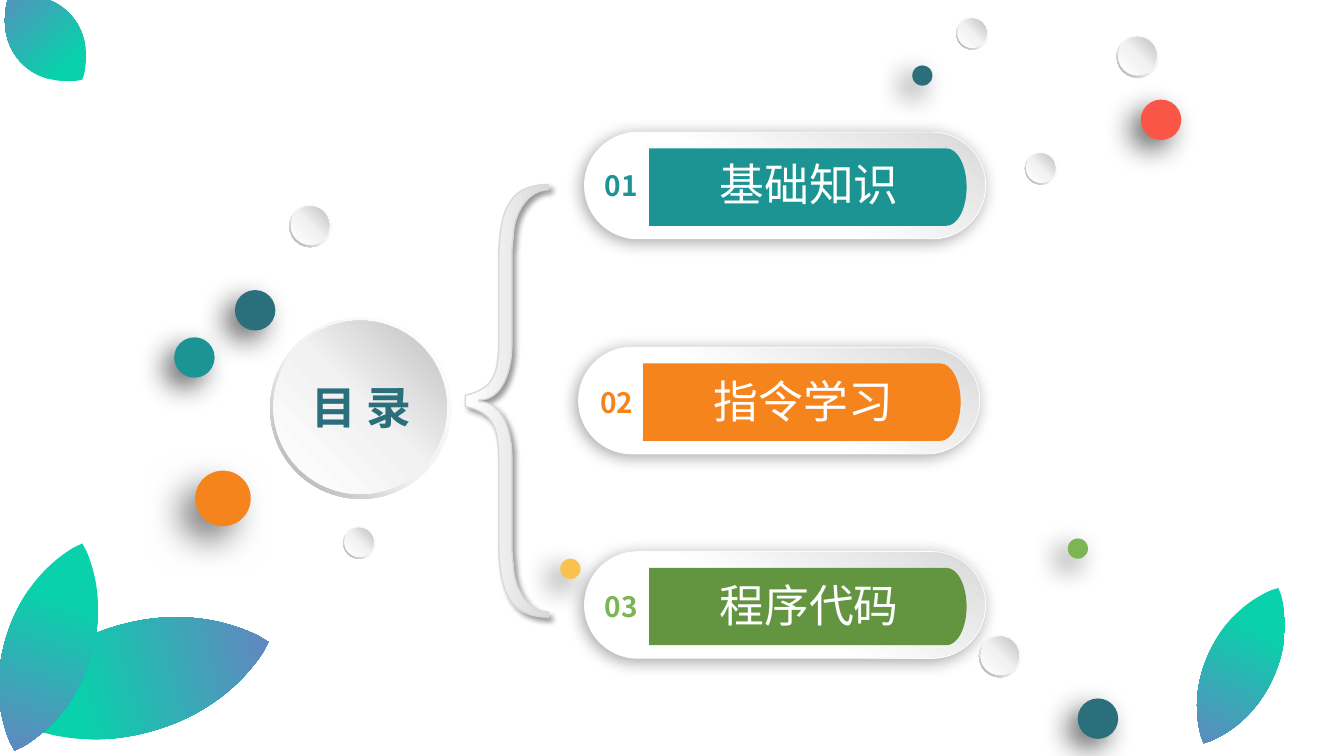
from lxml import etree
from pptx import Presentation
from pptx import util as u
from pptx.dml.color import RGBColor
from pptx.enum import shapes, text
from pptx.oxml.ns import qn

# All lengths are centimetres
FONT = "Noto Sans CJK SC"
TITLE = "目 录"
TITLE_BOX = (7.11, 9.55, 3.99, 1.37)
DARK_TEAL, TEAL, ORANGE, GREEN, WHITE = "2B6F7D", "1C9494", "F5841C", "7CB554", "FFFFFF"

# number, its left and top, heading, pill left and top, number colour, panel colour
CHAPTERS = [
    ("01", 14.97, 4.1, "基础知识", 14.73, 3.33, TEAL, TEAL),
    ("02", 14.86, 9.58, "指令学习", 14.58, 8.75, ORANGE, ORANGE),
    ("03", 14.97, 14.73, "程序代码", 14.73, 13.9, GREEN, "639541"),
]
PILL = (10.11, 2.69)
PANEL = (8, 1.95)

# left, top, width, height, rotation
LEAF_PAIR = [(2.01, 13.61, 2.79, 6.96, 254.8), (0.13, 13.56, 2.18, 5.49, 18.1)]
SINGLE_LEAVES = [(30.41, 14.6, 1.73, 4.34, 25.7), (0.28, -0.43, 1.73, 2.79, 138.3)]

# left, top, diameter
HUB = (6.81, 8, 4.57)
BEADS = [
    (24.1, 0.44, 0.81), (28.14, 0.89, 1.07), (8.65, 13.27, 0.81),
    (25.83, 3.84, 0.81), (24.67, 16, 1.07), (7.29, 5.16, 1.07),
]
# left, top, diameter, colour
DOTS = [
    (28.75, 2.51, 1.02, "F95647"), (22.99, 1.65, 0.51, DARK_TEAL),
    (5.92, 7.31, 1.02, DARK_TEAL), (14.12, 14.08, 0.51, "FAC14D"),
    (4.92, 11.86, 1.4, ORANGE), (27.16, 17.6, 1.02, DARK_TEAL),
    (4.39, 8.5, 1.02, TEAL), (26.91, 13.57, 0.51, GREEN),
]

# Gradients: (stops, clockwise angle)
PILL_FILL = ([(45, WHITE), (100, "D9D9D9")], 300)
RING_FILL = ([(0, WHITE), (55, "F2F2F2"), (100, "A6A6A6")], 135)
BEAD_FILL = ([(0, WHITE), (51, "F2F2F2"), (100, "BFBFBF")], 315)
BRACE_FILL = ([(0, WHITE), (100, "D9D9D9")], 0)
LEAF_FILL = ([(0, "09D1AB"), (31, "09D1AB"), (100, "6E7DC3")], 90)

# Shadows: opacity %, blur pt, distance pt, angle
PILL_SHADOW = (34, 12, 3, 135)
BRACE_SHADOW = (40, 4, 3, 45)
DOT_SHADOW = (60, 20, 10, 135)
BIG_DOT_SHADOW = (50, 25, 15, 135)

# Outlines: a step of one point is a line, a step of three is a curve
BRACE_MIDDLE = 10.1
BRACE_HALF = [
    [(11.73, 9.96)],
    [(12.07, 9.88), (12.29, 9.75), (12.4, 9.55)],
    [(12.52, 9.37), (12.57, 9.04), (12.57, 8.59)],
    [(12.57, 6.53)],
    [(12.57, 5.82), (12.67, 5.33), (12.88, 5.05)],
    [(13.06, 4.78), (13.39, 4.65), (13.82, 4.65)],
    [(13.82, 4.78)],
    [(13.34, 4.78), (12.95, 5.31), (12.93, 5.99)],
    [(12.9, 6.32)],
    [(12.9, 8.69)],
    [(12.9, 9.32), (12.67, 10.08), (12.07, 10.08)],
]
# Upper left quarter, as shares of width and height from the centre
LEAF_QUARTER = [
    [(0, -0.5)],
    [(-0.08, -0.47)],
    [(-0.34, -0.35), (-0.5, -0.19), (-0.5, 0)],
]

deck = Presentation()
deck.slide_width, deck.slide_height = u.Cm(33.87), u.Cm(19.05)
page = deck.slides.add_slide(deck.slide_layouts[6])


def color(code):
    return RGBColor.from_string(code)


def mirror(steps, flip):
    """Give the flipped steps in the opposite drawing order."""
    points = [flip(*point) for step in steps for point in step][::-1]
    turned, start = [points[:1]], 1
    for step in steps[:0:-1]:
        turned.append(points[start:start + len(step)])
        start += len(step)
    return turned


def style(shape, fill, line=None, shadow=None):
    """Apply a plain colour or gradient, an outline (colour, points) and a shadow."""
    if isinstance(fill, str):
        shape.fill.solid()
        shape.fill.fore_color.rgb = color(fill)
    else:
        stops, angle = fill
        shape.fill.gradient()
        shape.fill.gradient_angle = (360 - angle) % 360
        stop_list = next(shape._element.iter(qn("a:gsLst")))
        for old in list(stop_list):
            stop_list.remove(old)
        for position, code in stops:
            stop = etree.SubElement(stop_list, qn("a:gs"), pos=str(position * 1000))
            etree.SubElement(stop, qn("a:srgbClr"), val=code)
    if line:
        shape.line.color.rgb = color(line[0])
        shape.line.width = u.Pt(line[1])
    else:
        shape.line.fill.background()
    shape.shadow.inherit = False
    if shadow:
        opacity, blur, distance, angle = shadow
        outer = etree.SubElement(
            next(shape._element.iter(qn("a:effectLst"))), qn("a:outerShdw"),
            blurRad=str(u.Pt(blur)), dist=str(u.Pt(distance)), dir=str(angle * 60000),
            algn="ctr", rotWithShape="0")
        tint = etree.SubElement(outer, qn("a:srgbClr"), val="000000")
        etree.SubElement(tint, qn("a:alpha"), val=str(opacity * 1000))
    return shape


def add_preset(home, kind, left, top, width, height, *look):
    shape = home.shapes.add_shape(kind, *map(u.Cm, (left, top, width, height)))
    return style(shape, *look)


def add_outline(home, steps, *look):
    """Draw a closed outline, joining each step of three points into a curve."""
    first, *rest = [(u.Cm(x), u.Cm(y)) for step in steps for x, y in step]
    builder = home.shapes.build_freeform(*first)
    builder.add_line_segments(rest, close=True)
    shape = builder.convert_to_shape()
    segments = iter(list(shape._element.iter(qn("a:lnTo"))))
    for step in steps[1:]:
        parts = [next(segments) for point in step]
        if len(parts) == 3:
            curve = etree.Element(qn("a:cubicBezTo"))
            parts[0].addprevious(curve)
            for part in parts:
                curve.append(part[0])
                part.getparent().remove(part)
    return style(shape, *look)


def add_label(home, words, area, size, code, bold=False, wrap=True):
    box = home.shapes.add_textbox(*map(u.Cm, area))
    frame = box.text_frame
    layout = dict(word_wrap=wrap, vertical_anchor=text.MSO_ANCHOR.MIDDLE,
                  auto_size=text.MSO_AUTO_SIZE.SHAPE_TO_FIT_TEXT)
    for name, value in layout.items():
        setattr(frame, name, value)
    para = frame.paragraphs[0]
    para.alignment = text.PP_ALIGN.CENTER
    span = para.add_run()
    span.text = words
    for name, value in dict(name=FONT, size=u.Pt(size), bold=bold).items():
        setattr(span.font, name, value)
    span.font.color.rgb = color(code)
    etree.SubElement(span._r.get_or_add_rPr(), qn("a:ea"), typeface=FONT)
    return frame


def add_bead(left, top, size, share=0.905):
    """Draw a ring with a disc over it; share is disc size to ring size."""
    group = page.shapes.add_group_shape()
    ring = add_preset(group, shapes.MSO_SHAPE.DONUT, left, top, size, size, RING_FILL)
    ring.adjustments[0] = 0.049
    inset = size * (1 - share) * 0.4
    add_preset(group, shapes.MSO_SHAPE.OVAL, left + inset, top + inset,
               size * share, size * share, BEAD_FILL)
    return group


def add_chapter(number, number_left, number_top, heading, left, top, number_color, panel_color):
    group = page.shapes.add_group_shape()
    pill = add_preset(group, shapes.MSO_SHAPE.ROUNDED_RECTANGLE, left, top, *PILL,
                      PILL_FILL, (WHITE, 0.5), PILL_SHADOW)
    pill.adjustments[0] = 0.5
    x, y = left + 1.63, top + 0.41
    right, bottom, middle = x + PANEL[0], y + PANEL[1], y + PANEL[1] / 2
    bend, pull = right - 0.51, PANEL[1] * 0.28
    add_outline(group, [
        [(x, y)], [(bend, y)],
        [(bend + 0.28, y), (right, middle - pull), (right, middle)],
        [(right, middle + pull), (bend + 0.28, bottom), (bend, bottom)],
        [(x, bottom)],
    ], panel_color)
    add_label(group, number, (number_left, number_top, 1.37, 1.12), 20, number_color, True, False)
    add_label(group, heading, (left + 2.86, number_top - 0.3, 5.61, 1.63), 32, WHITE)


def add_leaf(home, left, top, width, height, rotation):
    side = LEAF_QUARTER + mirror(LEAF_QUARTER, lambda x, y: (x, -y))[1:]
    lens = side + mirror(side, lambda x, y: (-x, y))[1:]
    leaf = add_outline(home, [[(left + width * (x + 0.5), top + height * (y + 0.5))
                               for x, y in step] for step in lens], LEAF_FILL)
    leaf.rotation = rotation


hub = add_bead(*HUB, share=0.956)
title = add_label(hub, TITLE, TITLE_BOX, 32, DARK_TEAL, True)
for edge in ("left", "right", "top", "bottom"):
    setattr(title, "margin_" + edge, 0)
lower_half = mirror(BRACE_HALF, lambda x, y: (x, 2 * BRACE_MIDDLE - y))
add_outline(page, BRACE_HALF + lower_half, BRACE_FILL, ("D9D9D9", 1), BRACE_SHADOW)
for chapter in CHAPTERS:
    add_chapter(*chapter)
leaf_group = page.shapes.add_group_shape()
for place in LEAF_PAIR:
    add_leaf(leaf_group, *place)
for place in SINGLE_LEAVES:
    add_leaf(page, *place)
for left, top, size, code in DOTS:
    add_preset(page, shapes.MSO_SHAPE.OVAL, left, top, size, size, code, None,
               BIG_DOT_SHADOW if size > 1.2 else DOT_SHADOW)
for bead in BEADS:
    add_bead(*bead)
deck.save("out.pptx")
